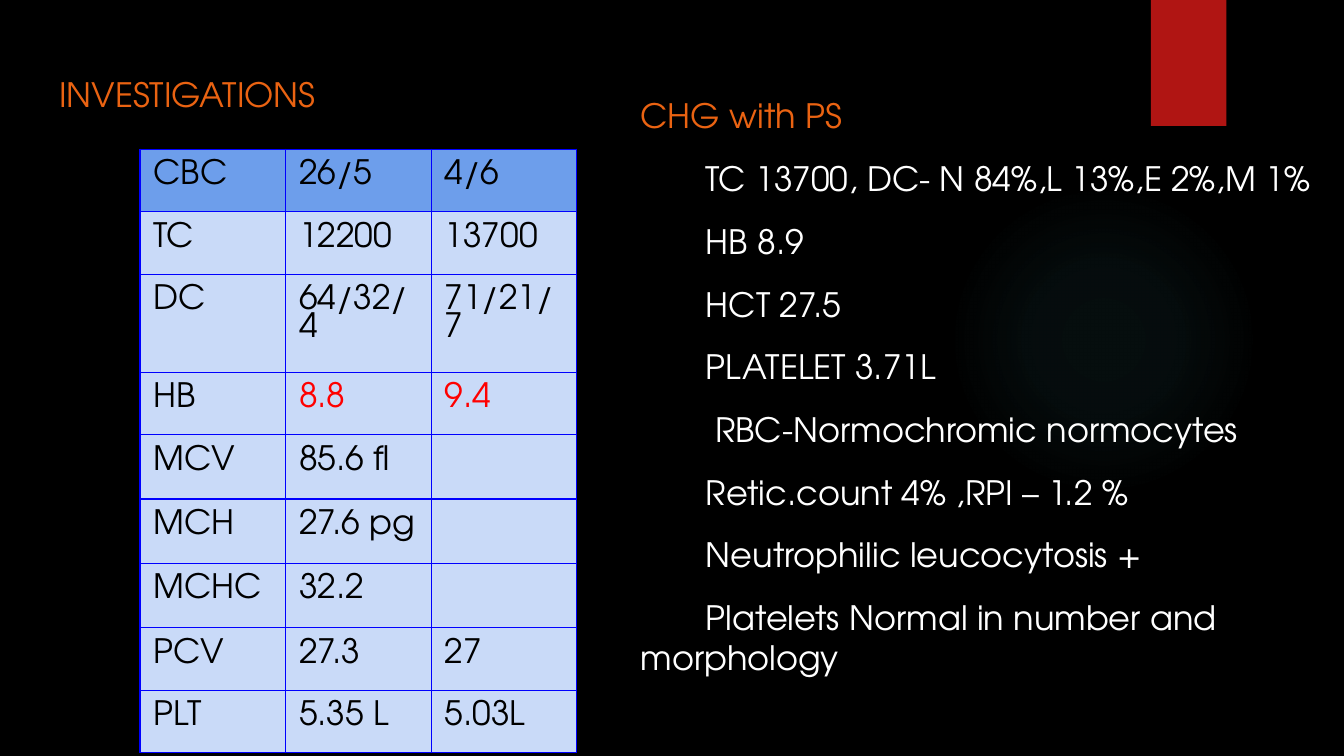
from lxml import etree
from pptx import Presentation
from pptx.dml.color import RGBColor
from pptx.enum.shapes import MSO_SHAPE as Shape
from pptx.enum.text import MSO_ANCHOR as Anchor, MSO_AUTO_SIZE as AutoSize, PP_ALIGN as Align
from pptx.oxml import parse_xml
from pptx.oxml.ns import nsdecls, qn
from pptx.util import Pt

FONT = "TeX Gyre Adventor"
ORANGE, WHITE, BLACK, RED = "EA6312", "FFFFFF", "000000", "FF0000"
HEADER_FILL, ROW_FILL, BORDER = "6D9EEB", "C9DAF8", "0000FF"
BLOOD_COUNTS = [
    ("CBC", "26/5", "4/6"),
    ("TC", "12200", "13700"),
    ("DC", "64/32/4", "71/21/7"),
    ("HB", "8.8", "9.4"),
    ("MCV", "85.6 fl", ""),
    ("MCH", "27.6 pg", ""),
    ("MCHC", "32.2", ""),
    ("PCV", "27.3", "27"),
    ("PLT", "5.35 L", "5.03L"),
]
SMEAR_FINDINGS = [
    ("CHG with PS", 0),
    ("TC 13700, DC- N 84%,L 13%,E 2%,M 1%", 35),
    ("HB 8.9", 35),
    ("HCT 27.5", 35),
    ("PLATELET 3.71L", 35),
    ("RBC-Normochromic normocytes", 40),
    ("Retic.count 4% ,RPI – 1.2 %", 35),
    ("Neutrophilic leucocytosis +", 35),
    ("Platelets Normal in number and morphology", 35),
]


def color(value):
    """Turn a hex string into a colour."""
    return RGBColor.from_string(value)


def set_values(target, values):
    """Set each attribute named in a dict."""
    for name, value in values.items():
        setattr(target, name, value)


def place(shape, left, top, width, height):
    """Move and size a shape in points."""
    set_values(shape, {"left": Pt(left), "top": Pt(top), "width": Pt(width), "height": Pt(height)})


def format_paragraph(paragraph, text, hue, **values):
    """Write a paragraph in the slide's font with the given format."""
    paragraph.text = text
    set_values(paragraph, {"alignment": Align.LEFT, "line_spacing": 1.0, "space_before": Pt(0), **values})
    set_values(paragraph.font, {"name": FONT, "size": Pt(18), "bold": False})
    paragraph.font.color.rgb = color(hue)


def set_margins(target, size):
    """Give a cell or text frame four equal margins."""
    for side in ("left", "right", "top", "bottom"):
        setattr(target, f"margin_{side}", Pt(size))


def add_backdrop(slide, kind, left, top, width, height, fill):
    """Add a plain shape behind the slide's text."""
    shape = slide.shapes.add_shape(kind, Pt(left), Pt(top), Pt(width), Pt(height))
    shape.shadow.inherit = False
    shape.line.fill.background()
    shape.fill.solid()
    shape.fill.fore_color.rgb = color(fill)
    shape.element.getparent().insert(2, shape.element)
    return shape


def add_glow(slide):
    """Add the faint round glow."""
    hue = "50B9C1"
    shape = add_backdrop(slide, Shape.OVAL, 508, 99, 166, 166, hue)
    stops = "".join(
        f'<a:gs pos="{position * 1000}"><a:srgbClr val="{hue}">'
        f'<a:alpha val="{alpha * 1000}"/></a:srgbClr></a:gs>'
        for position, alpha in [(0, 7), (36, 6), (69, 0)]
    )
    gradient = parse_xml(
        f'<a:gradFill {nsdecls("a")}><a:gsLst>{stops}</a:gsLst><a:path path="circle">'
        '<a:fillToRect l="50000" t="50000" r="50000" b="50000"/></a:path></a:gradFill>'
    )
    properties = shape.element.spPr
    properties.replace(properties.find(qn("a:solidFill")), gradient)


def fill_title(slide):
    """Place and write the title."""
    title = slide.shapes.title
    place(title, 24.5, 32.5, 671, 47.5)
    frame = title.text_frame
    set_values(frame, {"vertical_anchor": Anchor.TOP, "word_wrap": True})
    set_margins(frame, 7.2)
    format_paragraph(frame.paragraphs[0], "INVESTIGATIONS", ORANGE)


def fill_body(slide):
    """Place and write the smear findings."""
    body = slide.placeholders[1]
    place(body, 336, 47.5, 384, 322.5)
    frame = body.text_frame
    set_values(frame, {"vertical_anchor": Anchor.TOP, "word_wrap": True, "auto_size": AutoSize.SHAPE_TO_FIT_TEXT})
    for index, (text, indent) in enumerate(SMEAR_FINDINGS):
        paragraph = frame.add_paragraph() if index else frame.paragraphs[0]
        properties = paragraph._p.get_or_add_pPr()
        properties.set("marL", "0")
        properties.set("indent", str(Pt(indent)))
        etree.SubElement(properties, qn("a:buNone"))
        format_paragraph(paragraph, text, WHITE if index else ORANGE, space_before=Pt(12 if index else 0))


def add_borders(cell):
    """Draw the four borders of a cell."""
    properties = cell._tc.get_or_add_tcPr()
    for position, side in enumerate(("lnL", "lnR", "lnT", "lnB")):
        line = parse_xml(
            f'<a:{side} {nsdecls("a")} w="{Pt(0.75)}"><a:solidFill>'
            f'<a:srgbClr val="{BORDER}"/></a:solidFill></a:{side}>'
        )
        properties.insert(position, line)


def fill_cell(cell, text, hue, fill):
    """Write and format one table cell."""
    set_margins(cell, 7.2)
    cell.fill.solid()
    cell.fill.fore_color.rgb = color(fill)
    add_borders(cell)
    paragraph = cell.text_frame.paragraphs[0]
    if text:
        format_paragraph(paragraph, text, hue, line_spacing=0.88)
    else:
        etree.SubElement(paragraph._p, qn("a:endParaRPr"), sz="1600")


def add_count_table(slide):
    """Add the table of blood counts."""
    heights = [31.2, 31.2, 48, 31.2, 34.5, 34.5, 34.5, 31.2, 31.2]
    frame = slide.shapes.add_table(len(BLOOD_COUNTS), 3, Pt(75), Pt(80), Pt(234), Pt(sum(heights)))
    table = frame.table
    for column in table.columns:
        column.width = Pt(78)
    for row_index, (values, height) in enumerate(zip(BLOOD_COUNTS, heights)):
        table.rows[row_index].height = Pt(height)
        for column_index, text in enumerate(values):
            hue = RED if values[0] == "HB" and column_index else BLACK
            fill = ROW_FILL if row_index else HEADER_FILL
            fill_cell(table.cell(row_index, column_index), text, hue, fill)


def main():
    """Build and save the slide."""
    presentation = Presentation()
    set_values(presentation, {"slide_width": Pt(720), "slide_height": Pt(405)})
    slide = presentation.slides.add_slide(presentation.slide_layouts[1])
    slide.background.fill.solid()
    slide.background.fill.fore_color.rgb = color(BLACK)
    add_backdrop(slide, Shape.RECTANGLE, 616.5, 0, 40.5, 67.5, "B01513")
    add_glow(slide)
    fill_title(slide)
    fill_body(slide)
    add_count_table(slide)
    presentation.save("out.pptx")


if __name__ == "__main__":
    main()
